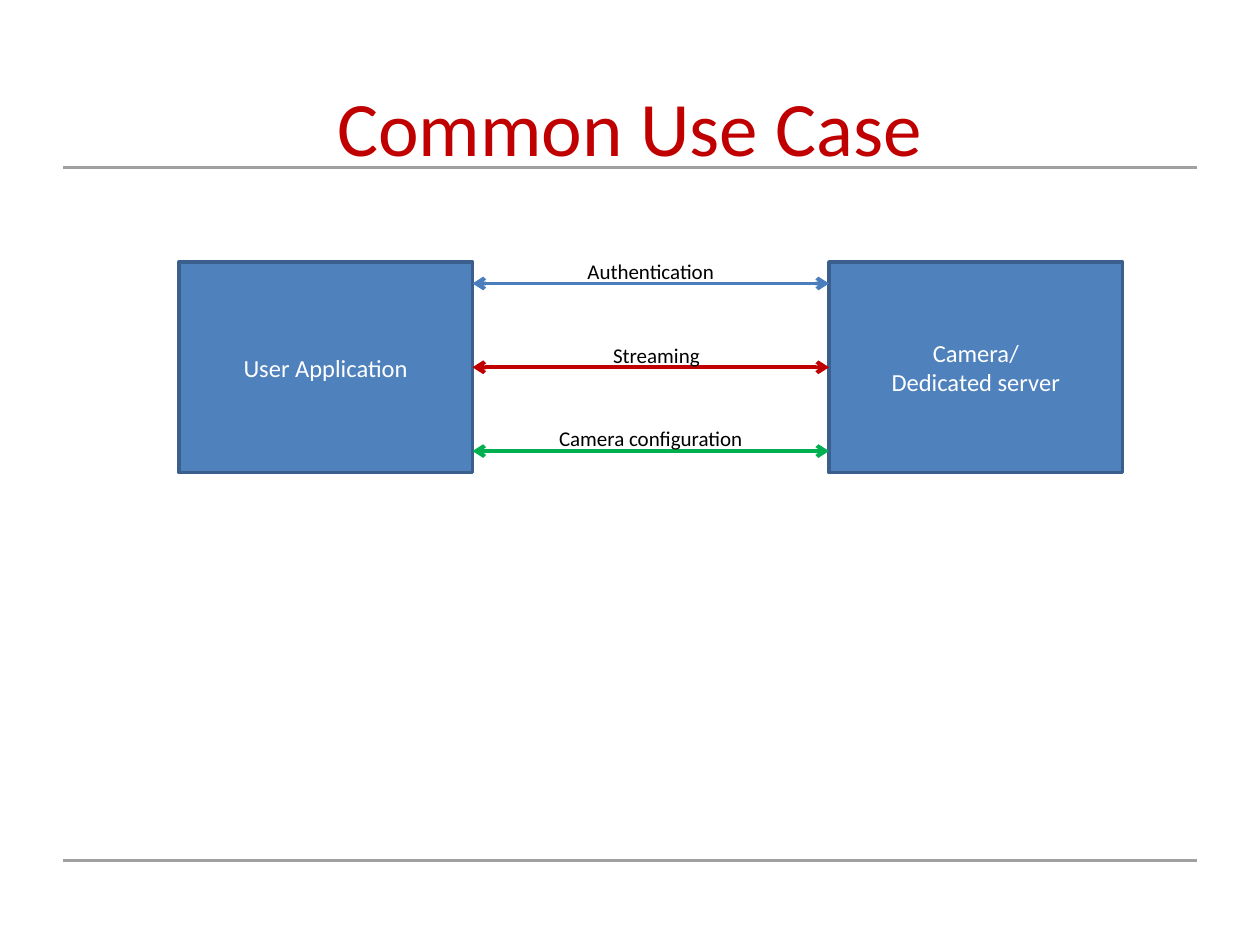
from dataclasses import dataclass

from lxml import etree
from pptx import Presentation
from pptx.dml.color import RGBColor
from pptx.enum.shapes import MSO_CONNECTOR, MSO_SHAPE
from pptx.enum.text import MSO_ANCHOR, PP_ALIGN
from pptx.oxml.ns import qn
from pptx.shapes.autoshape import Shape
from pptx.shapes.connector import Connector
from pptx.slide import Slide
from pptx.util import Inches, Pt

STRAIGHT = MSO_CONNECTOR.STRAIGHT
RECTANGLE = MSO_SHAPE.RECTANGLE
CENTER = PP_ALIGN.CENTER
TOP, MIDDLE = MSO_ANCHOR.TOP, MSO_ANCHOR.MIDDLE
LEFT_SIDE, RIGHT_SIDE = 1, 3

COLORS = {
    "rule": "A0A0A3",
    "red": "C00000",
    "blue": "4B7EBC",
    "green": "00B050",
    "box": "4F81BD",
    "box_edge": "3A5F8C",
    "white": "FFFFFF",
    "black": "000000",
}
FONT = "Calibri"

BOX_TOP, BOX_WIDTH, BOX_HEIGHT = 2.08, 2.33, 1.67
CLIENT_LEFT, SERVER_LEFT = 1.42, 6.58
LINK_START = CLIENT_LEFT + BOX_WIDTH
LINK_WIDTH = SERVER_LEFT - LINK_START
LABEL_RISE = 0.25


@dataclass
class Node:
    lines: list[str]
    left: float


@dataclass
class Link:
    label: str
    y: float
    color: str
    label_width: float = LINK_WIDTH
    joined: bool = False


NODES = [
    Node(["User Application"], CLIENT_LEFT),
    Node(["Camera/", "Dedicated server"], SERVER_LEFT),
]
LINKS = [
    Link("Authentication", 2.25, "blue"),
    Link("Streaming", 2.92, "red", label_width=2.92, joined=True),
    Link("Camera configuration", 3.58, "green"),
]


def rgb(name: str) -> RGBColor:
    return RGBColor.from_string(COLORS[name])


def write(shape: Shape, lines: list[str], size: float, color: str, anchor: MSO_ANCHOR) -> None:
    frame = shape.text_frame
    frame.word_wrap = True
    frame.vertical_anchor = anchor
    font_values = {"name": FONT, "size": Pt(size)}
    for index, line in enumerate(lines):
        para = frame.paragraphs[0] if index == 0 else frame.add_paragraph()
        para.alignment = CENTER
        span = para.add_run()
        span.text = line
        for attribute, value in font_values.items():
            setattr(span.font, attribute, value)
        span.font.color.rgb = rgb(color)


def add_text(page: Slide, text: str, left: float, top: float, width: float,
             height: float, size: float, color: str) -> None:
    box = page.shapes.add_textbox(Inches(left), Inches(top), Inches(width), Inches(height))
    write(box, [text], size, color, TOP)


def add_line(page: Slide, left: float, right: float, y: float,
             color: str, width: float) -> Connector:
    line = page.shapes.add_connector(STRAIGHT, Inches(left), Inches(y), Inches(right), Inches(y))
    line.line.color.rgb = rgb(color)
    line.line.width = Pt(width)
    etree.SubElement(line._element.spPr, qn("a:effectLst"))
    return line


def add_node(page: Slide, node: Node) -> Shape:
    box = page.shapes.add_shape(RECTANGLE, Inches(node.left), Inches(BOX_TOP),
                                Inches(BOX_WIDTH), Inches(BOX_HEIGHT))
    box.shadow.inherit = False
    box.fill.solid()
    box.fill.fore_color.rgb = rgb("box")
    box.line.color.rgb = rgb("box_edge")
    box.line.width = Pt(2)
    write(box, node.lines, 14, "white", MIDDLE)
    return box


def add_link(page: Slide, link: Link, client: Shape, server: Shape) -> None:
    """Draw a two-headed arrow between the boxes, with its label above."""
    arrow = add_line(page, LINK_START, SERVER_LEFT, link.y, link.color, 2.25)
    for end in ("a:headEnd", "a:tailEnd"):
        etree.SubElement(arrow.line._get_or_add_ln(), qn(end), type="arrow")
    if link.joined:
        arrow.begin_connect(client, RIGHT_SIDE)
        arrow.end_connect(server, LEFT_SIDE)
    add_text(page, link.label, LINK_START, link.y - LABEL_RISE, link.label_width, 0.3, 12, "black")


def main() -> None:
    deck = Presentation()
    deck.slide_width, deck.slide_height = Inches(10), Inches(7.5)
    page = deck.slides.add_slide(deck.slide_layouts[6])
    for y in (6.83, 1.33):
        add_line(page, 0.5, 9.5, y, "rule", 1.75)
    add_text(page, "Common Use Case", 0.5, 0.58, 9, 1.25, 44, "red")
    client, server = [add_node(page, node) for node in NODES]
    for link in LINKS:
        add_link(page, link, client, server)
    deck.save("out.pptx")


if __name__ == "__main__":
    main()
